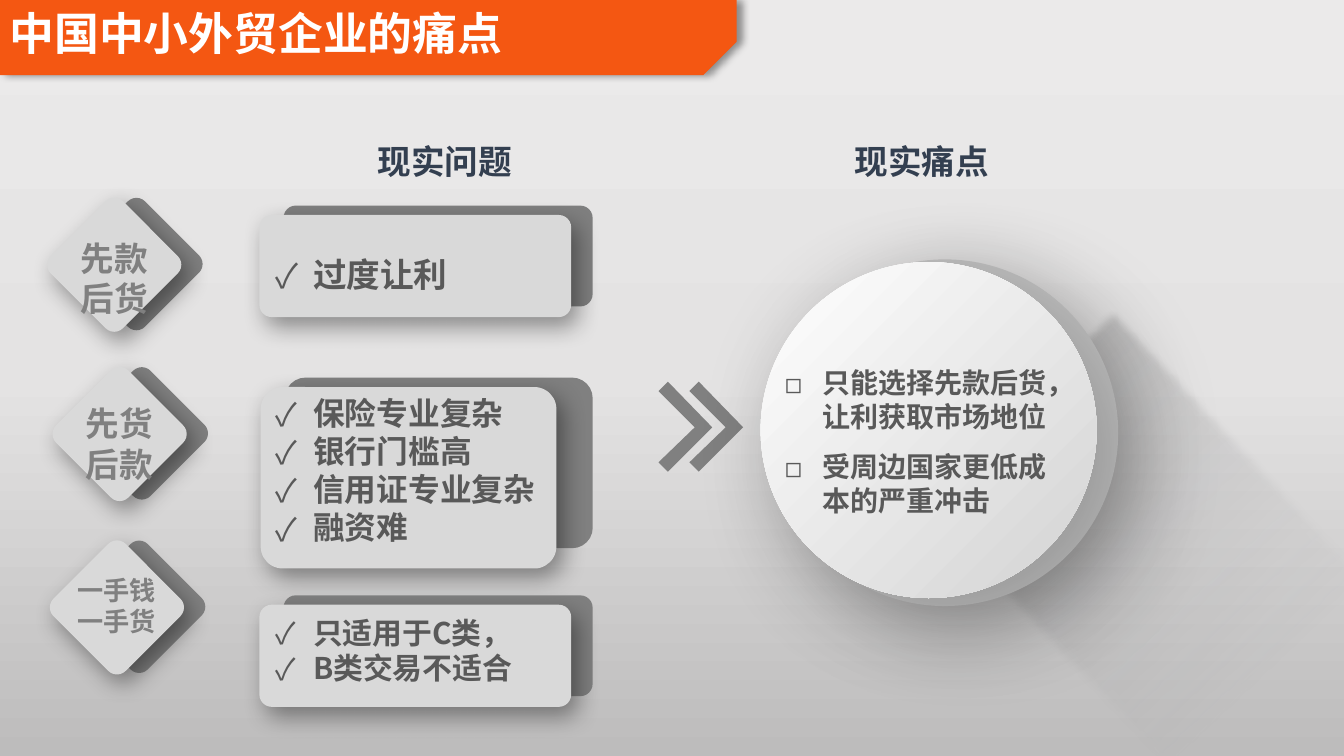
from lxml import etree
from pptx import Presentation
from pptx import util as u
from pptx.dml.color import RGBColor
from pptx.enum import shapes, text
from pptx.oxml.ns import qn

WIDTH = 10
HEIGHT = WIDTH * 9 / 16
FONT = "Noto Sans CJK SC"
ORANGE, WHITE, NAVY = "F45712", "FFFFFF", "333F50"
GREY, PALE, INK, RIM = "808080", "D9D9D9", "595959", "BFBFBF"

# gradient stops: position %, colour, opacity %
BACKDROP = [(0, "EBEAEA", 100), (50, "E4E3E3", 100), (100, "BDBCBC", 100)]
BEAM = [(0, "000000", 27), (100, "F2F3F5", 0)]
DISC = [(0, "FFFFFF", 100), (100, "D3D3D3", 100)]

# shadows: opacity %, blur pt, distance pt, direction in degrees
BANNER_SHADOW = (40, 4, 3, 0)
CARD_SHADOW = (40, 13, 6, 55)
DISC_SHADOW = (22, 50, 17, 45)
BEAM_SOFTNESS = 5

TITLE = "中国中小外贸企业的痛点"
HEADINGS = [("现实问题", 2.74), ("现实痛点", 6.29)]
HEADING_TOP = 1.01

# left, top, words, text size, text top, text height
DIAMONDS = [
    (0.47, 1.59, ["先款", "后货"], 18, 1.73, 0.68),
    (0.51, 2.85, ["先货", "后款"], 18, 2.96, 0.68),
    (0.49, 4.14, ["一手钱", "一手货"], 14, 4.23, 0.55),
]
DIAMOND = 0.76

# left, top, width, height, back height, words, text size, text top, text height
CARDS = [
    (1.93, 1.6, 2.32, 0.76, 0.75, ["过度让利"], 18, 1.85, 0.38),
    (1.94, 2.88, 2.2, 1.35, 1.27,
     ["保险专业复杂", "银行门槛高", "信用证专业复杂", "融资难"], 17, 2.89, 1.51),
    (1.93, 4.5, 2.32, 0.76, 0.75,
     ["只适用于C类，", "B类交易不适合"], 16, 4.53, 0.61),
]
CARD_BACK_RIGHT = 4.41
PAINS = ["只能选择先款后货，让利获取市场地位", "受周边国家更低成本的严重冲击"]

# one chevron in hundredths of an inch, and where each one starts
CHEVRON = [(7, 0), (40, 34), (7, 67), (0, 60), (27, 34), (0, 7)]
CHEVRON_LEFTS, CHEVRON_TOP = (490, 513), 284


def rgb(value):
    return RGBColor.from_string(value)


def add_color(parent, value, opacity):
    color = etree.SubElement(parent, qn("a:srgbClr"), val=value)
    if opacity < 100:
        etree.SubElement(color, qn("a:alpha"), val=str(opacity * 1000))


def paint_gradient(fill, element, stops, angle):
    """Give fill, held by element, the gradient stops."""
    fill.gradient()
    gradient = next(element.iter(qn("a:gradFill")))
    stop_list = gradient.find(qn("a:gsLst"))
    for old in list(stop_list):
        stop_list.remove(old)
    for position, value, opacity in stops:
        stop = etree.SubElement(stop_list, qn("a:gs"), pos=str(position * 1000))
        add_color(stop, value, opacity)
    gradient.find(qn("a:lin")).set("ang", str(angle * 60000))


def finish(shape, fill=None, shadow=None):
    shape.shadow.inherit = False
    shape.line.fill.background()
    if fill:
        shape.fill.solid()
        shape.fill.fore_color.rgb = rgb(fill)
    if shadow:
        opacity, blur, distance, direction = shadow
        effects = shape._element.spPr.find(qn("a:effectLst"))
        outer = etree.SubElement(
            effects, qn("a:outerShdw"), blurRad=str(u.Pt(blur)),
            dist=str(u.Pt(distance)), dir=str(direction * 60000),
            algn="ctr", rotWithShape="0")
        add_color(outer, "000000", opacity)


def add_shape(page, kind, at, fill=None, shadow=None, rotation=0, corner=None):
    shape = page.shapes.add_shape(kind, *map(u.Inches, at))
    shape.rotation = rotation
    if corner is not None:
        shape.adjustments[0] = corner
    finish(shape, fill, shadow)
    return shape


def add_rounded(page, at, fill, shadow=None, rotation=0):
    kind = shapes.MSO_SHAPE.ROUNDED_RECTANGLE
    return add_shape(page, kind, at, fill, shadow, rotation, 0.121)


def add_text(page, at, lines, size, color, align=None, bullet=None,
             before=None, wrap=True):
    box = page.shapes.add_textbox(*map(u.Inches, at))
    frame = box.text_frame
    frame.margin_left = frame.margin_right = u.Inches(0.07)
    frame.margin_top = frame.margin_bottom = u.Inches(0.04)
    frame.word_wrap = wrap
    frame.auto_size = text.MSO_AUTO_SIZE.SHAPE_TO_FIT_TEXT
    frame.text = "\n".join(lines)
    for para in frame.paragraphs:
        para.alignment = align
        if before:
            para.space_before = u.Pt(before)
        properties = para._p.get_or_add_pPr()
        if bullet:
            properties.set("marL", str(u.Inches(0.28)))
            properties.set("indent", str(u.Inches(-0.28)))
            etree.SubElement(properties, qn("a:buFont"), typeface=FONT)
            etree.SubElement(properties, qn("a:buChar"), char=bullet)
        font = para.font
        font.size, font.bold, font.name = u.Pt(size), True, FONT
        font.color.rgb = rgb(color)
        etree.SubElement(properties.find(qn("a:defRPr")), qn("a:ea"), typeface=FONT)


def add_banner(page):
    banner = add_shape(page, shapes.MSO_SHAPE.SNIP_1_RECTANGLE,
                       (0, 0, 5.48, 0.56), ORANGE, BANNER_SHADOW, corner=0.443)
    banner._element.spPr.find(qn("a:xfrm")).set("flipV", "1")
    add_text(page, (0, 0, 5.48, 0.48), [TITLE], 24, WHITE)


def add_beam(page):
    beam = add_shape(page, shapes.MSO_SHAPE.RECTANGLE, (7.01, 2.88, 2.94, 2.25),
                     rotation=46.6)
    paint_gradient(beam.fill, beam._element, BEAM, 0)
    effects = beam._element.spPr.find(qn("a:effectLst"))
    etree.SubElement(effects, qn("a:softEdge"), rad=str(u.Pt(BEAM_SOFTNESS)))


def add_diamond(page, left, top, words, size, text_top, text_height):
    add_rounded(page, (left + 0.17, top, 0.75, 0.75), GREY, rotation=45)
    add_rounded(page, (left, top, DIAMOND, DIAMOND), PALE, CARD_SHADOW, 45)
    add_text(page, (left - 0.02, text_top, 0.8, text_height), words, size, GREY,
             align=text.PP_ALIGN.CENTER)


def add_card(page, left, top, width, height, back_height, words, size,
             text_top, text_height):
    back_left = left + 0.18
    add_rounded(page, (back_left, top - 0.07, CARD_BACK_RIGHT - back_left,
                       back_height), GREY)
    add_rounded(page, (left, top, width, height), PALE, CARD_SHADOW)
    add_text(page, (1.98, text_top, 3.13, text_height), words, size, INK, bullet="✓")


def add_chevrons(page):
    outlines = [[(left + x, CHEVRON_TOP + y) for x, y in CHEVRON]
                for left in CHEVRON_LEFTS]
    builder = page.shapes.build_freeform(*outlines[0][0], scale=u.Inches(0.01))
    builder.add_line_segments(outlines[0][1:], close=True)
    for outline in outlines[1:]:
        builder.move_to(*outline[0])
        builder.add_line_segments(outline[1:], close=True)
    finish(builder.convert_to_shape(), GREY)


def main():
    deck = Presentation()
    deck.slide_width, deck.slide_height = u.Inches(WIDTH), u.Inches(HEIGHT)
    page = deck.slides.add_slide(deck.slide_layouts[6])
    paint_gradient(page.background.fill, page._element, BACKDROP, 90)

    add_beam(page)
    oval = shapes.MSO_SHAPE.OVAL
    add_shape(page, oval, (5.74, 1.93, 2.58, 2.58), RIM, DISC_SHADOW)
    add_banner(page)
    for heading, left in HEADINGS:
        add_text(page, (left, HEADING_TOP, 1.16, 0.38), [heading], 18, NAVY, wrap=False)
    for diamond in DIAMONDS:
        add_diamond(page, *diamond)
    for card in CARDS:
        add_card(page, *card)
    add_chevrons(page)
    disc = add_shape(page, oval, (5.66, 1.95, 2.5, 2.5), shadow=DISC_SHADOW)
    paint_gradient(disc.fill, disc._element, DISC, 45)
    add_text(page, (5.77, 2.68, 2.19, 1.21), PAINS, 15, INK, bullet="◻", before=9)
    deck.save("out.pptx")


if __name__ == "__main__":
    main()
